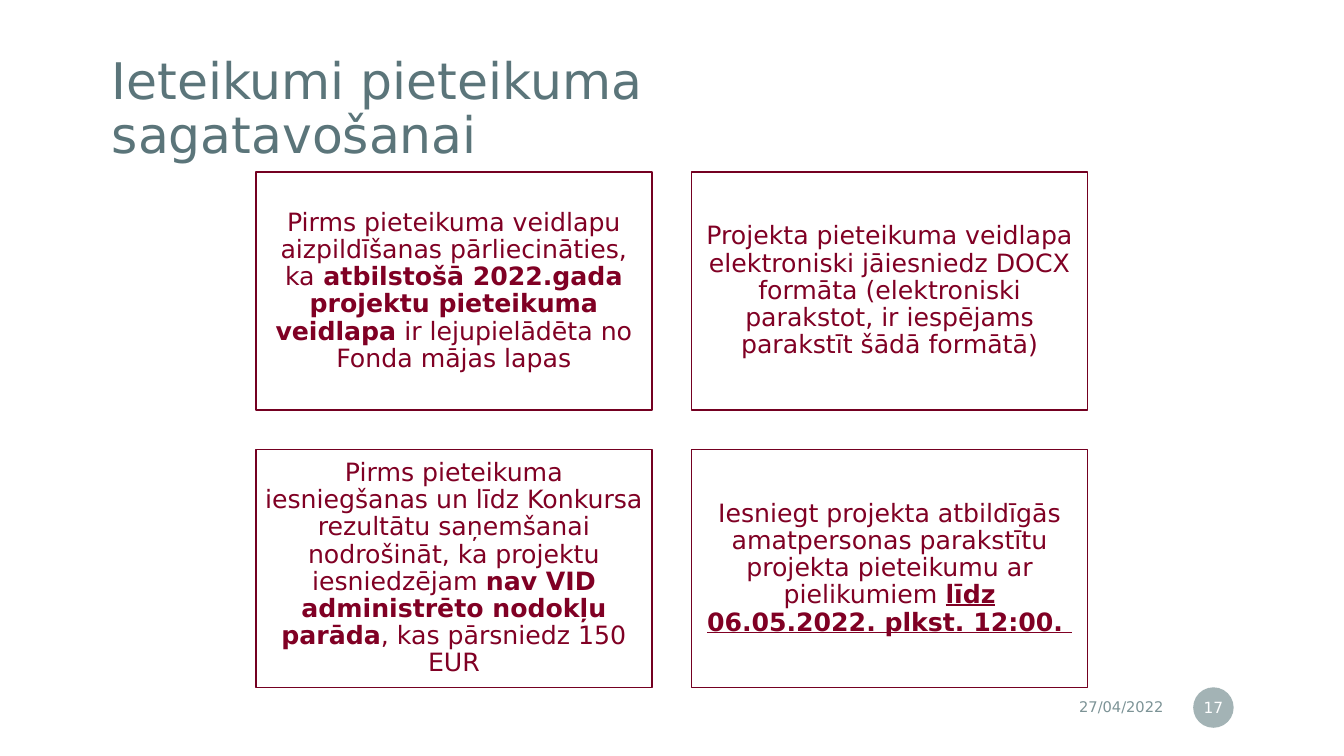
from dataclasses import dataclass

from lxml import etree
from pptx import Presentation
from pptx.dml.color import RGBColor
from pptx.enum import shapes, text
from pptx.oxml import ns
from pptx.util import Cm, Pt

FONT = "DejaVu Sans"
WHITE = RGBColor(0xFF, 0xFF, 0xFF)
SLATE = RGBColor(0x5B, 0x75, 0x7A)
GREY = RGBColor(0x7C, 0x93, 0x96)
WINE = RGBColor(0x80, 0x00, 0x24)
BORDER = RGBColor(0x74, 0x00, 0x21)

CARD_LEFT, CARD_TOP = 6.45, 4.34
CARD_WIDTH, CARD_HEIGHT = 9.98, 5.99
GAP = 1.0
COLUMNS = 2


@dataclass(frozen=True)
class Phrase:
    words: str
    bold: bool = False
    underline: bool = False


@dataclass(frozen=True)
class Card:
    phrases: tuple[Phrase, ...]


CARDS = [
    Card((
        Phrase("Pirms pieteikuma veidlapu aizpildīšanas pārliecināties, ka"),
        Phrase(" atbilstošā 2022.gada projektu pieteikuma veidlapa", bold=True),
        Phrase(" ir lejupielādēta no Fonda mājas lapas"),
    )),
    Card((
        Phrase("Projekta pieteikuma veidlapa elektroniski jāiesniedz DOCX formāta "
               "(elektroniski parakstot, ir iespējams parakstīt šādā formātā)"),
    )),
    Card((
        Phrase("Pirms pieteikuma iesniegšanas un līdz Konkursa rezultātu saņemšanai "
               "nodrošināt, ka projektu iesniedzējam "),
        Phrase("nav VID administrēto nodokļu parāda", bold=True),
        Phrase(", kas pārsniedz 150 EUR"),
    )),
    Card((
        Phrase("Iesniegt projekta atbildīgās amatpersonas parakstītu projekta "
               "pieteikumu ar pielikumiem "),
        Phrase("līdz 06.05.2022. plkst. 12:00. ", bold=True, underline=True),
    )),
]


def write_text(shape, phrases: tuple[Phrase, ...], *, size: float, color: RGBColor,
               align=text.PP_ALIGN.LEFT, spacing: float = 1.0,
               inset_x: float = 0.25, inset_y: float = 0.13) -> None:
    frame = shape.text_frame
    frame.word_wrap = True
    frame.vertical_anchor = text.MSO_ANCHOR.MIDDLE
    frame.margin_left = frame.margin_right = Cm(inset_x)
    frame.margin_top = frame.margin_bottom = Cm(inset_y)
    paragraph = frame.paragraphs[0]
    paragraph.alignment = align
    paragraph.line_spacing = spacing
    for phrase in phrases:
        run = paragraph.add_run()
        run.text = phrase.words
        run.font.name = FONT
        run.font.size = Pt(size)
        run.font.color.rgb = color
        run.font.bold = phrase.bold
        run.font.underline = phrase.underline


def draw_card(slide, card: Card, index: int) -> None:
    row, column = divmod(index, COLUMNS)
    panel = slide.shapes.add_shape(
        shapes.MSO_SHAPE.RECTANGLE,
        Cm(CARD_LEFT + column * (CARD_WIDTH + GAP)),
        Cm(CARD_TOP + row * (CARD_HEIGHT + GAP)),
        Cm(CARD_WIDTH), Cm(CARD_HEIGHT))
    panel.shadow.inherit = False
    panel.fill.solid()
    panel.fill.fore_color.rgb = WHITE
    panel.line.color.rgb = BORDER
    panel.line.width = Pt(1)
    write_text(panel, card.phrases, size=18, color=WINE, align=text.PP_ALIGN.CENTER,
               spacing=0.9, inset_x=0.18, inset_y=0.18)


def draw_page_number(slide, number: str) -> None:
    badge = slide.shapes.add_shape(shapes.MSO_SHAPE.OVAL,
                                   Cm(30.07), Cm(17.32), Cm(1.02), Cm(1.02))
    badge.shadow.inherit = False
    badge.fill.solid()
    badge.fill.fore_color.rgb = GREY
    badge.line.fill.background()
    fill_color = badge._element.spPr.find(f"{ns.qn('a:solidFill')}/{ns.qn('a:srgbClr')}")
    etree.SubElement(fill_color, ns.qn("a:alpha"), val="70000")
    write_text(badge, (Phrase(number),), size=11, color=WHITE,
               align=text.PP_ALIGN.CENTER, inset_x=0.05)


def main() -> None:
    deck = Presentation()
    deck.slide_width, deck.slide_height = Cm(33.87), Cm(19.05)
    slide = deck.slides.add_slide(deck.slide_layouts[6])

    title = slide.shapes.add_textbox(Cm(2.31), Cm(1.22), Cm(22.17), Cm(3.12))
    write_text(title, (Phrase("Ieteikumi pieteikuma sagatavošanai"),), size=36,
               color=SLATE, spacing=0.9, inset_x=0.51, inset_y=0.51)

    date = slide.shapes.add_textbox(Cm(21.92), Cm(17.37), Cm(7.65), Cm(0.89))
    write_text(date, (Phrase("27/04/2022"),), size=10.5, color=GREY,
               align=text.PP_ALIGN.RIGHT)

    draw_page_number(slide, "17")
    for index, card in enumerate(CARDS):
        draw_card(slide, card, index)

    deck.save("out.pptx")


if __name__ == "__main__":
    main()
